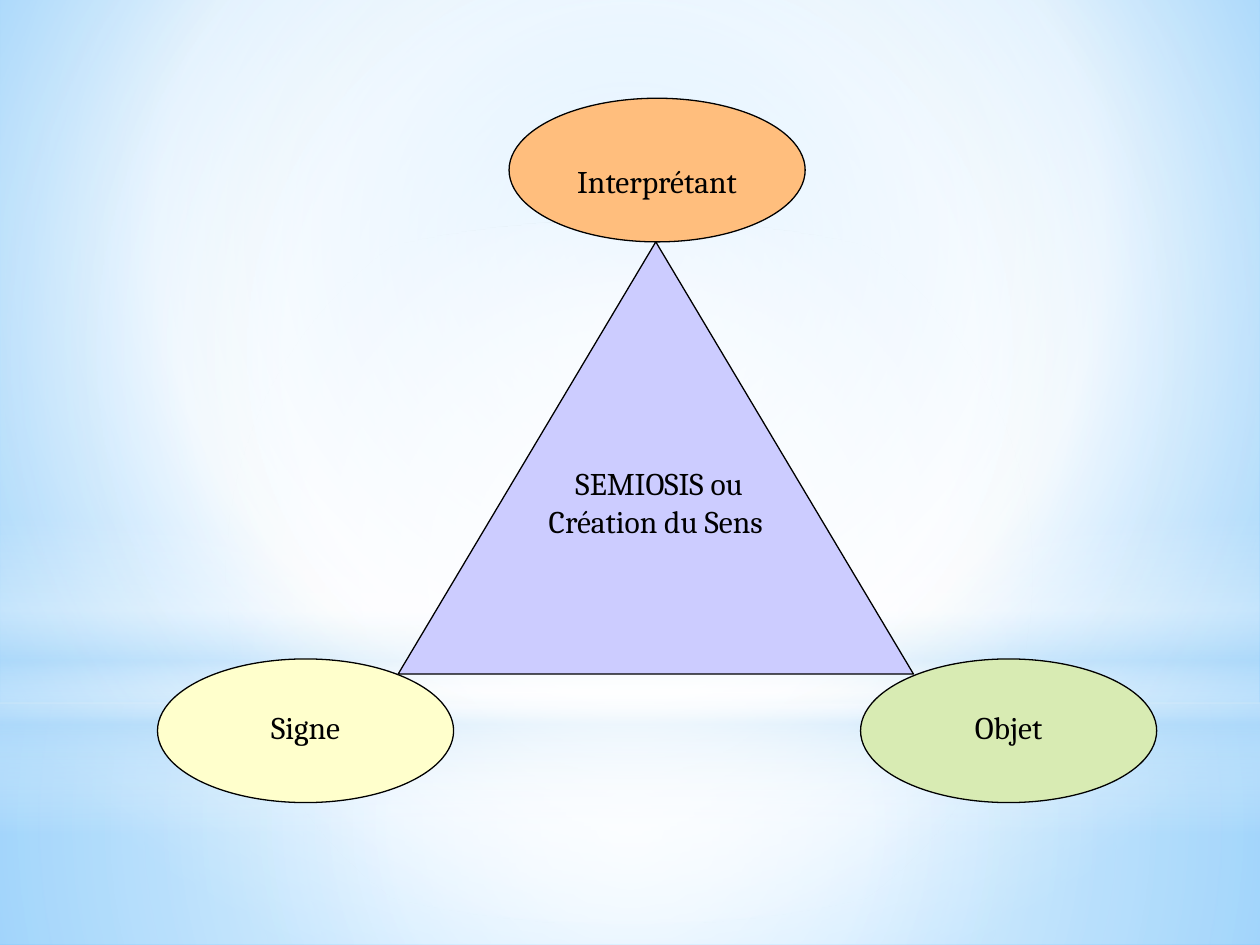
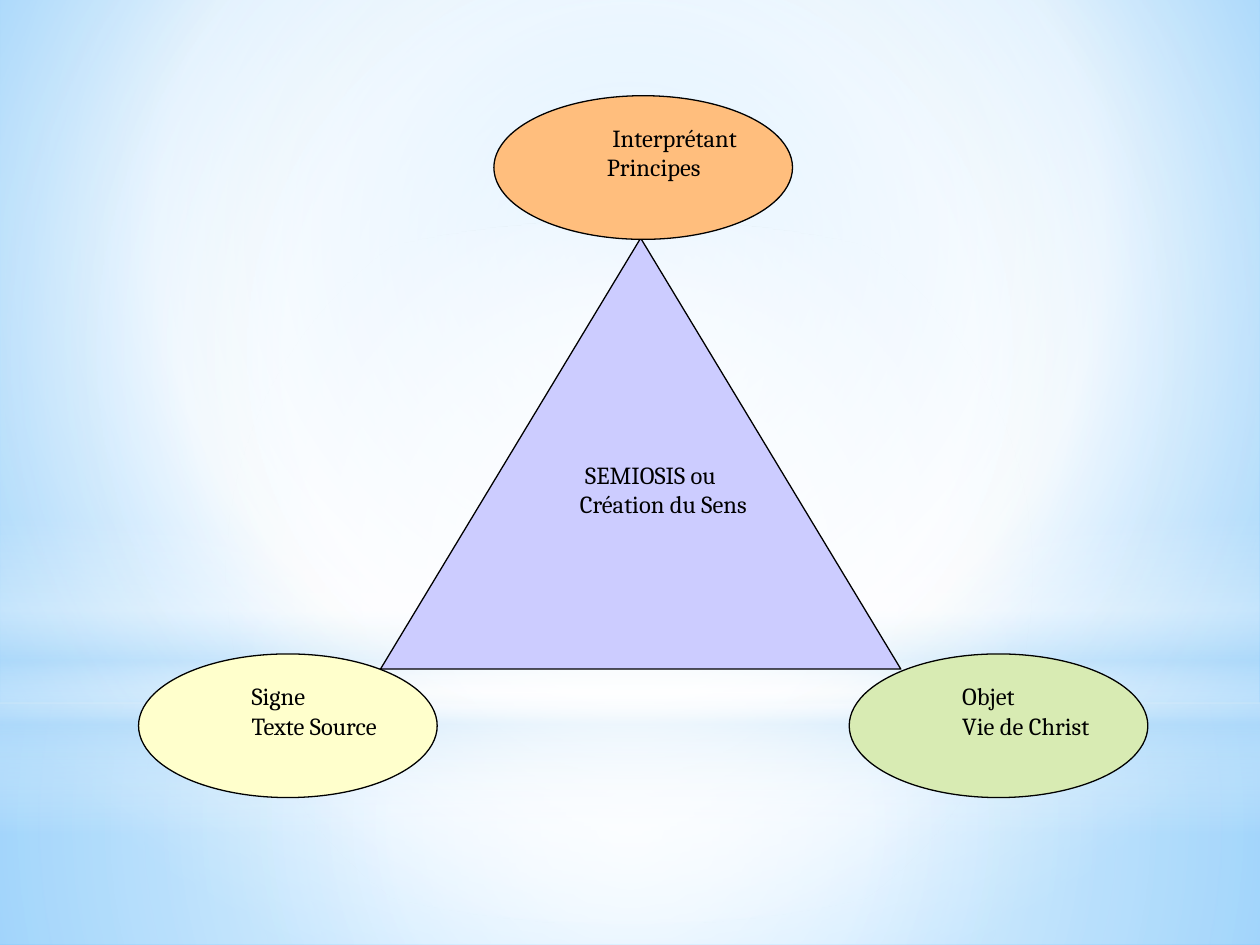
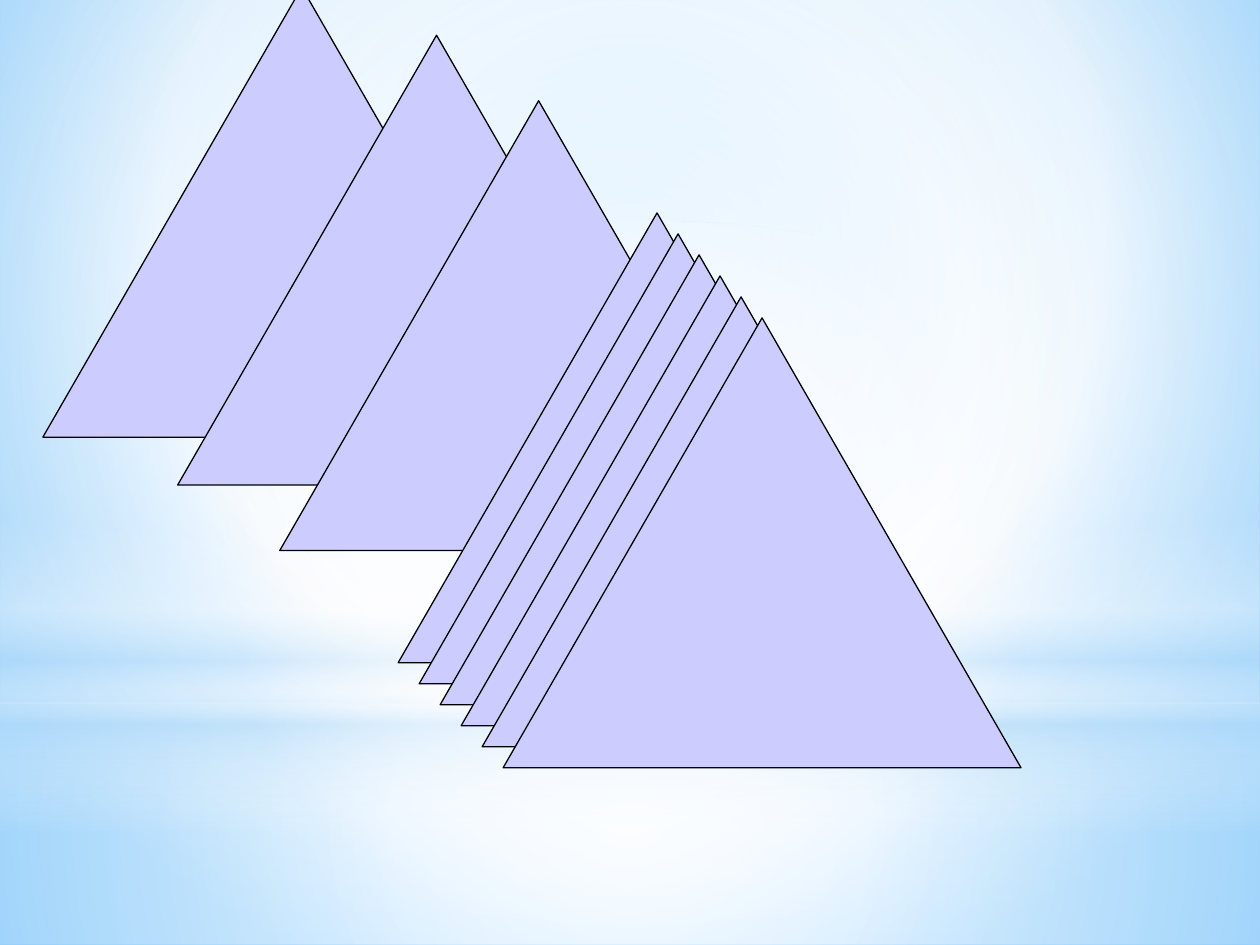
from dataclasses import dataclass

from lxml import etree
from pptx import Presentation
from pptx.dml.color import RGBColor
from pptx.enum.shapes import MSO_SHAPE
from pptx.enum.text import MSO_ANCHOR, PP_ALIGN
from pptx.oxml.ns import qn
from pptx.util import Inches, Pt

RECTANGLE = MSO_SHAPE.RECTANGLE
OVAL = MSO_SHAPE.OVAL
TRIANGLE = MSO_SHAPE.ISOSCELES_TRIANGLE
TOP = MSO_ANCHOR.TOP
LEFT, CENTER = PP_ALIGN.LEFT, PP_ALIGN.CENTER

FONT = "Cambria"
BLACK, WHITE, SKY = "000000", "FFFFFF", "B4DCFA"
LAVENDER, YELLOW, ORANGE, GREEN = "CCCCFF", "FFFFCC", "FFBE7D", "D8EBB3"
INSET = 0.05
BLANK_LAYOUT = 6

Box = tuple[float, float, float, float]  # left, top, width, height in inches
Stop = tuple[int, str, int]  # position %, colour, opacity %


@dataclass(frozen=True)
class Gradient:
    """Gradient that is circular around a centre, or linear if it has none."""
    stops: tuple[Stop, ...]
    centre: Box | None = (50, 50, 50, 50)  # margins in %


@dataclass(frozen=True)
class Glow:
    kind: int
    box: Box
    gradient: Gradient


@dataclass(frozen=True)
class Node:
    kind: int
    box: Box
    colour: str
    lines: tuple[str, ...] = ()
    drop: float = 0  # extra space above the text, in inches


@dataclass(frozen=True)
class TextStyle:
    size: int
    align: int
    level: int = 0


BACKGROUND = Gradient(
    ((0, "9ED5FF", 100), (60, WHITE, 100), (100, "5BB9FF", 100)), (20, 10, 20, 60))
GLOWS = (
    Glow(RECTANGLE, (0, 5.58, 10, 1.92),
         Gradient(((0, WHITE, 91), (37, WHITE, 76), (100, SKY, 79)))),
    Glow(RECTANGLE, (0, 0, 10, 5.58),
         Gradient(((0, WHITE, 89), (48, WHITE, 62), (100, SKY, 79)))),
    Glow(RECTANGLE, (0, 4.12, 10, 2.5),
         Gradient(((0, WHITE, 0), (29, WHITE, 30), (45, SKY, 40),
                   (55, WHITE, 26), (65, SKY, 60), (100, WHITE, 0)), None)),
    Glow(OVAL, (0, 1.75, 10, 5.58), Gradient(((0, WHITE, 100), (56, WHITE, 0)))),
)

SEMIOSIS = (" SEMIOSIS ou", "Création du Sens")
GENERAL_MODEL = (
    Node(TRIANGLE, (3.16, 1.92, 4.09, 3.43), LAVENDER, SEMIOSIS),
    Node(OVAL, (1.25, 5.23, 2.35, 1.14), YELLOW, ("Signe",), 0.17),
    Node(OVAL, (4.04, 0.78, 2.35, 1.14), ORANGE, ("Interprétant",), 0.29),
    Node(OVAL, (6.83, 5.23, 2.35, 1.14), GREEN, ("Objet",), 0.17),
)
APPLIED_MODEL = (
    Node(TRIANGLE, (3.02, 1.89, 4.13, 3.42), LAVENDER, SEMIOSIS),
    Node(OVAL, (1.1, 5.19, 2.37, 1.14), YELLOW, ("Signe", "Texte Source")),
    Node(OVAL, (3.92, 0.76, 2.37, 1.14), ORANGE, (" Interprétant", "Principes")),
    Node(OVAL, (6.74, 5.19, 2.37, 1.14), GREEN, ("Objet", "Vie de Christ")),
)
CENTRED = TextStyle(18, CENTER)
INDENTED = TextStyle(14, LEFT, 1)

TRIANGLE_SIZE = (4.11, 3.57)
SPACED_CORNERS = [(0.34, -0.1), (1.41, 0.28), (2.22, 0.8)]
STACK_START, STACK_STEP, STACK_COUNT = (3.16, 1.69), 1 / 6, 6


def rgb(colour: str) -> RGBColor:
    return RGBColor.from_string(colour)


def set_gradient(fill, owner, gradient: Gradient) -> None:
    """Give the fill, which lies inside the owner element, the gradient."""
    fill.gradient()
    grad = owner.xpath(".//a:gradFill")[0]
    for child in list(grad):
        grad.remove(child)
    stops = etree.SubElement(grad, qn("a:gsLst"))
    for position, colour, opacity in gradient.stops:
        stop = etree.SubElement(stops, qn("a:gs"), pos=str(position * 1000))
        clr = etree.SubElement(stop, qn("a:srgbClr"), val=colour)
        if opacity < 100:
            etree.SubElement(clr, qn("a:alpha"), val=str(opacity * 1000))
    if gradient.centre is None:
        etree.SubElement(grad, qn("a:lin"), ang="5400000", scaled="0")
        return
    circle = etree.SubElement(grad, qn("a:path"), {"path": "circle"})
    margins = {side: str(value * 1000) for side, value in zip("ltrb", gradient.centre)}
    etree.SubElement(circle, qn("a:fillToRect"), margins)


def add_shape(shapes, kind: int, box: Box):
    sp = shapes.add_shape(kind, *map(Inches, box))
    sp.shadow.inherit = False
    return sp


def build_master(prs, slide) -> None:
    """Put the background and glows on the master, drawing them on the slide first."""
    master = prs.slide_master
    set_gradient(master.background.fill, master.element, BACKGROUND)
    tree = master.shapes.element
    for index, glow in enumerate(GLOWS):
        sp = add_shape(slide.shapes, glow.kind, glow.box)
        set_gradient(sp.fill, sp.element, glow.gradient)
        sp.line.fill.background()
        tree.insert(2 + index, sp.element)


def add_node(shapes, node: Node, style: TextStyle) -> None:
    sp = add_shape(shapes, node.kind, node.box)
    sp.fill.solid()
    sp.fill.fore_color.rgb = rgb(node.colour)
    sp.line.color.rgb = rgb(BLACK)
    sp.line.width = Pt(0.75)
    if not node.lines:
        return
    tf = sp.text_frame
    tf.word_wrap = True
    tf.vertical_anchor = TOP
    tf.margin_left = tf.margin_right = tf.margin_bottom = Inches(INSET)
    tf.margin_top = Inches(INSET + node.drop)
    tf.text = "\n".join(node.lines)
    for p in tf.paragraphs:
        p.alignment = style.align
        p.level = style.level
        for r in p.runs:
            r.font.name = FONT
            r.font.size = Pt(style.size)
            r.font.color.rgb = rgb(BLACK)


def add_model(slide, nodes: tuple[Node, ...], style: TextStyle) -> None:
    group = slide.shapes.add_group_shape()
    for node in nodes:
        add_node(group.shapes, node, style)


def add_triangle_series(slide) -> None:
    left, top = STACK_START
    stack = [(left + i * STACK_STEP, top + i * STACK_STEP) for i in range(STACK_COUNT)]
    for corner in SPACED_CORNERS + stack:
        add_node(slide.shapes, Node(TRIANGLE, corner + TRIANGLE_SIZE, LAVENDER), CENTRED)


def main() -> None:
    prs = Presentation()
    prs.slide_width, prs.slide_height = Inches(10), Inches(7.5)
    layout = prs.slide_layouts[BLANK_LAYOUT]
    general, applied, series = (prs.slides.add_slide(layout) for _ in range(3))
    build_master(prs, general)
    add_model(general, GENERAL_MODEL, CENTRED)
    add_model(applied, APPLIED_MODEL, INDENTED)
    add_triangle_series(series)
    prs.save("out.pptx")


if __name__ == "__main__":
    main()
